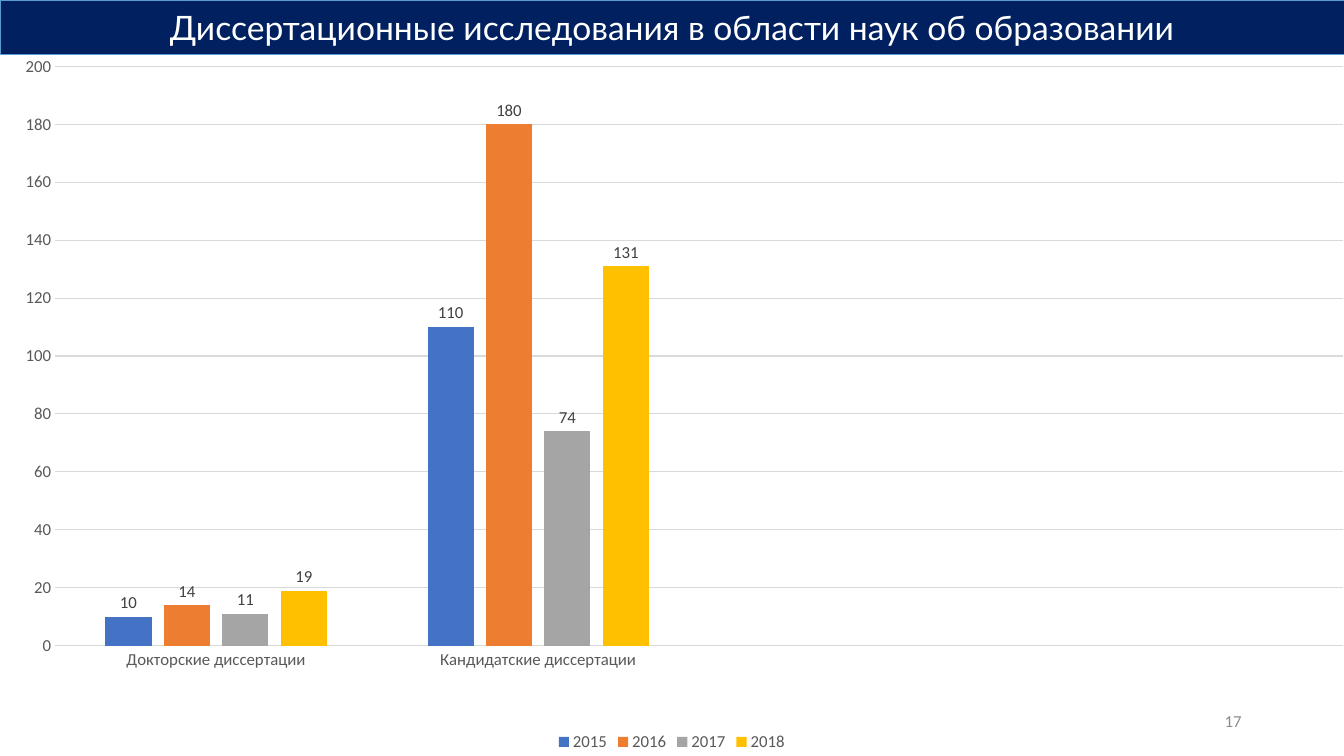
"""Build a slide with a column chart of dissertations by year."""
from lxml import etree
from pptx import Presentation
from pptx.chart.data import CategoryChartData
from pptx.dml.color import RGBColor
from pptx.enum.chart import (XL_CHART_TYPE, XL_LABEL_POSITION,
                             XL_LEGEND_POSITION, XL_TICK_MARK)
from pptx.enum.text import MSO_ANCHOR, MSO_AUTO_SIZE, PP_ALIGN
from pptx.oxml.ns import qn
from pptx.util import Cm, Pt

COLUMN = XL_CHART_TYPE.COLUMN_CLUSTERED
OUTER = XL_LABEL_POSITION.OUTSIDE_END
BOTTOM = XL_LEGEND_POSITION.BOTTOM
NO_TICK = XL_TICK_MARK.NONE
MIDDLE = MSO_ANCHOR.MIDDLE
NO_FIT = MSO_AUTO_SIZE.NONE
CENTER, RIGHT = PP_ALIGN.CENTER, PP_ALIGN.RIGHT

NAVY = RGBColor(0x00, 0x20, 0x60)
EDGE = RGBColor(0x5B, 0x9B, 0xD5)
WHITE = RGBColor(0xFF, 0xFF, 0xFF)
BLACK = RGBColor(0x00, 0x00, 0x00)
DARK = RGBColor(0x40, 0x40, 0x40)
GREY = RGBColor(0x59, 0x59, 0x59)
PALE = RGBColor(0x8C, 0x8C, 0x8C)
GRID = RGBColor(0xD9, 0xD9, 0xD9)
BLUE = RGBColor(0x44, 0x72, 0xC4)
ORANGE = RGBColor(0xED, 0x7D, 0x31)
SILVER = RGBColor(0xA5, 0xA5, 0xA5)
GOLD = RGBColor(0xFF, 0xC0, 0x00)

WIDTH, HEIGHT, BAND = Cm(33.87), Cm(19.05), Cm(1.37)
GROUPS = ("Докторские диссертации", "Кандидатские диссертации", "", "")
YEARS = (
    ("2015", (10, 110, None, None), BLUE),
    ("2016", (14, 180, None, None), ORANGE),
    ("2017", (11, 74, None, None), SILVER),
    ("2018", (19, 131, None, None), GOLD),
)
PLOT = {"x": 0.041, "y": 0.017, "w": 0.959, "h": 0.826}


def set_font(font, size, color, name="Calibri"):
    font.size, font.name, font.bold = Pt(size), name, False
    font.color.rgb = color


def set_line(line, color, width):
    line.color.rgb = color
    line.width = Pt(width)


def write(shape, text, *, size, color, align, name="Calibri"):
    frame = shape.text_frame
    frame.word_wrap = True
    frame.auto_size = NO_FIT
    frame.vertical_anchor = MIDDLE
    par = frame.paragraphs[0]
    par.alignment = align
    run = par.add_run()
    run.text = text
    set_font(run.font, size, color, name)


def place(shape, left, top, width, height):
    shape.left, shape.top = left, top
    shape.width, shape.height = width, height


def add_title(slide, text):
    title = slide.shapes.title
    place(title, 0, 0, WIDTH, BAND)
    title.fill.solid()
    title.fill.fore_color.rgb = NAVY
    set_line(title.line, EDGE, 0.5)
    write(title, text, size=24, color=WHITE, align=CENTER, name="Lato")


def fix_plot(chart):
    area = chart.plots[0]._element.getparent()
    for old in area.findall(qn("c:layout")):
        area.remove(old)
    layout = etree.Element(qn("c:layout"))
    area.insert(0, layout)
    manual = etree.SubElement(layout, qn("c:manualLayout"))
    parts = {"layoutTarget": "inner", "xMode": "edge", "yMode": "edge", **PLOT}
    for tag, val in parts.items():
        etree.SubElement(manual, qn("c:" + tag)).set("val", str(val))


def style_axes(chart):
    groups, values = chart.category_axis, chart.value_axis
    for axis in (groups, values):
        axis.major_tick_mark = axis.minor_tick_mark = NO_TICK
        set_font(axis.tick_labels.font, 12, GREY)
    set_line(groups.format.line, GRID, 0.75)
    values.format.line.fill.background()
    values.minimum_scale, values.maximum_scale = 0, 200
    values.major_unit = 20
    values.has_major_gridlines = True
    set_line(values.major_gridlines.format.line, GRID, 0.75)


def style_bars(chart):
    plot = chart.plots[0]
    plot.gap_width, plot.overlap = 219, -27
    plot.vary_by_categories = False
    for bars, (_, _, color) in zip(plot.series, YEARS):
        bars.format.fill.solid()
        bars.format.fill.fore_color.rgb = color
        bars.invert_if_negative = False
        labels = bars.data_labels
        labels.show_value = True
        labels.position = OUTER
        set_font(labels.font, 12, DARK)


def add_chart(slide):
    data = CategoryChartData()
    data.categories = GROUPS
    for year, counts, _ in YEARS:
        data.add_series(year, counts)
    chart = slide.shapes.add_chart(
        COLUMN, 0, BAND, WIDTH, HEIGHT - BAND, data).chart
    set_font(chart.font, 10, BLACK)
    chart.has_title = False
    chart.has_legend = True
    chart.legend.position = BOTTOM
    chart.legend.include_in_layout = False
    set_font(chart.legend.font, 12, GREY)
    style_axes(chart)
    style_bars(chart)
    fix_plot(chart)


def add_number(slide, text):
    box = slide.shapes.add_textbox(Cm(23.92), Cm(17.66), Cm(7.62), Cm(1.01))
    write(box, text, size=12, color=PALE, align=RIGHT)


def main():
    deck = Presentation()
    deck.slide_width, deck.slide_height = WIDTH, HEIGHT
    slide = deck.slides.add_slide(deck.slide_layouts[5])
    add_title(slide, "Диссертационные исследования в области наук об образовании")
    add_chart(slide)
    add_number(slide, "17")
    deck.save("out.pptx")


if __name__ == "__main__":
    main()
